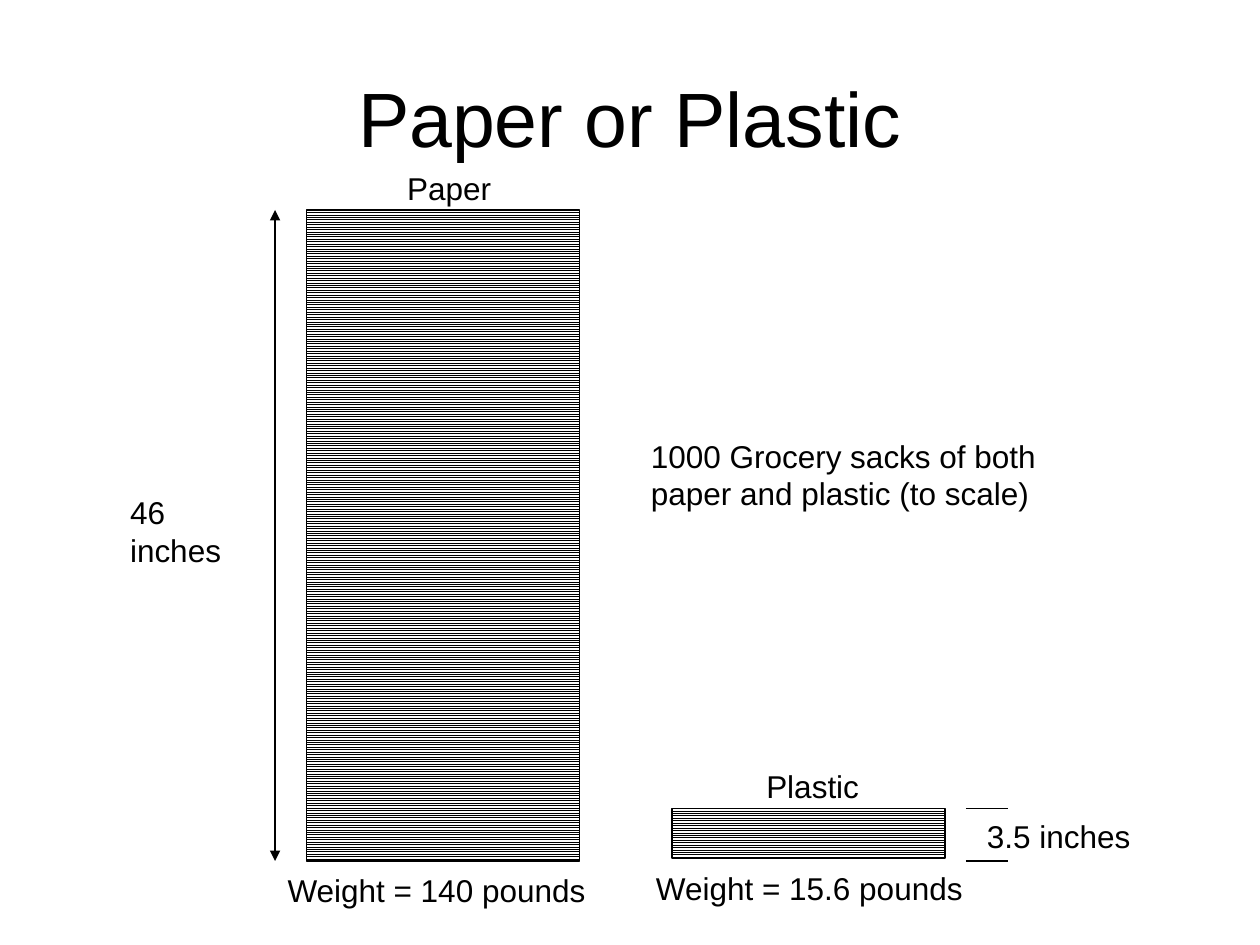
from pptx import Presentation
from pptx.dml.color import RGBColor
from pptx.enum.dml import MSO_PATTERN
from pptx.enum.shapes import MSO_CONNECTOR, MSO_SHAPE
from pptx.enum.text import MSO_ANCHOR, MSO_AUTO_SIZE, PP_ALIGN
from pptx.oxml.ns import qn
from pptx.util import Inches, Pt
from lxml.etree import SubElement


def color(code):
    return RGBColor.from_string(code)


def set_font(para, size):
    values = {"name": "Arial", "size": Pt(size), "bold": False}
    for name, value in values.items():
        setattr(para.font, name, value)
    para.font.color.rgb = color("000000")


# Page on a grid of 120 columns and 90 rows
deck = Presentation()
deck.slide_width, deck.slide_height = Inches(10), Inches(7.5)
col, row = deck.slide_width / 120, deck.slide_height / 90
page = deck.slides.add_slide(deck.slide_layouts[5])
shapes = page.shapes

# Title
title = shapes.title
title_place = {"left": 6 * col, "top": 3.6 * row, "width": 108 * col, "height": 15 * row}
for name, value in title_place.items():
    setattr(title, name, int(value))
title.text_frame.text = "Paper or Plastic"
title.text_frame.vertical_anchor = MSO_ANCHOR.MIDDLE
title.text_frame.paragraphs[0].alignment = PP_ALIGN.CENTER
set_font(title.text_frame.paragraphs[0], 44)

# Stacks of sacks, heights to scale: 46 inches against 3.5 inches
stack_top, stack_height = 20, 62
stack_bottom = stack_top + stack_height
plastic_top = 77
plastic_height = stack_height * 3.5 / 46
for left, top, height in [(29.2, stack_top, stack_height), (64, plastic_top, plastic_height)]:
    stack = shapes.add_shape(MSO_SHAPE.RECTANGLE, int(left * col), int(top * row),
                             int(26 * col), int(height * row))
    stack.shadow.inherit = False
    stack.fill.patterned()
    stack.fill.pattern = MSO_PATTERN.NARROW_HORIZONTAL
    stack.fill.fore_color.rgb = color("000000")
    stack.fill.back_color.rgb = color("FFFFFF")
    stack.line.color.rgb = color("000000")
    stack.line.width = Pt(0.75)

# Height arrow and the two marks beside the plastic stack
lines = [
    (26.2, stack_top, 26.2, stack_bottom, True),
    (92, plastic_top, 96, plastic_top, False),
    (92, stack_bottom, 96, stack_bottom, False),
]
for x1, y1, x2, y2, arrows in lines:
    line = shapes.add_connector(MSO_CONNECTOR.STRAIGHT, int(x1 * col), int(y1 * row),
                                int(x2 * col), int(y2 * row))
    line.line.color.rgb = color("000000")
    line.line.width = Pt(0.75)
    if arrows:
        for end in ("a:headEnd", "a:tailEnd"):
            SubElement(line.line._get_or_add_ln(), qn(end), type="triangle")
    SubElement(line._element.spPr, qn("a:effectLst"))

# Labels
labels = [
    ("46 inches", 11.2, 46.4, 15.2),
    ("Weight = 140 pounds", 26.2, 82.4, 30.8),
    ("Paper", 37.6, 15.5, 10.4),
    ("Plastic", 71.8, 72.5, 11.3),
    ("Weight = 15.6 pounds", 61.3, 82.2, 31.7),
    ("3.5 inches", 92.8, 77.2, 16.1),
    ("1000 Grocery sacks of both\npaper and plastic (to scale)", 60.8, 41, 40),
]
for text, left, top, width in labels:
    height = 4.8 + 3.6 * text.count("\n")
    box = shapes.add_textbox(int(left * col), int(top * row), int(width * col), int(height * row))
    frame = box.text_frame
    frame.text = text
    frame.word_wrap = False
    frame.auto_size = MSO_AUTO_SIZE.SHAPE_TO_FIT_TEXT
    for para in frame.paragraphs:
        set_font(para, 18)

deck.save("out.pptx")
